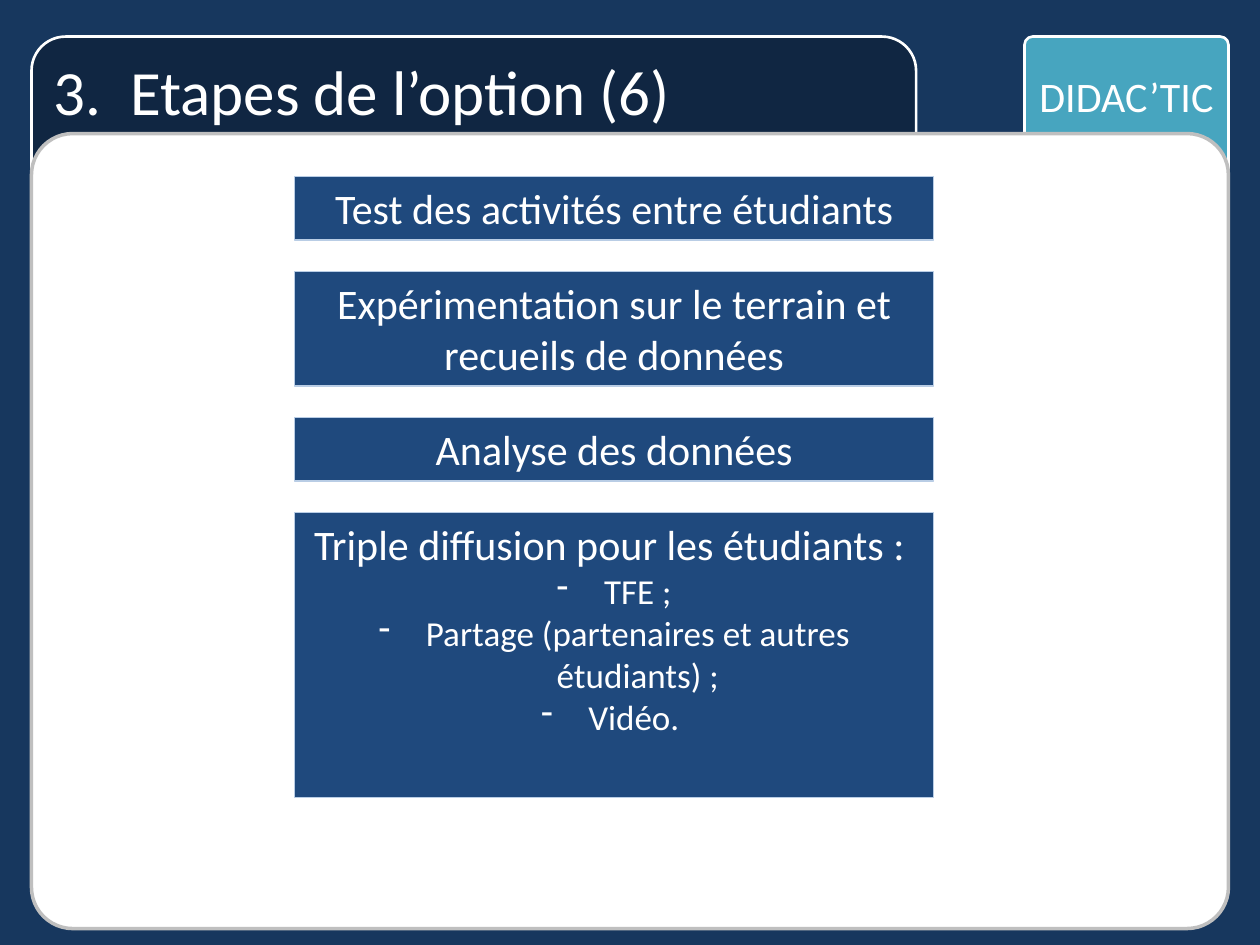
from dataclasses import dataclass

from lxml import etree
from pptx import Presentation
from pptx.dml.color import RGBColor
from pptx.enum.shapes import MSO_SHAPE
from pptx.enum.text import MSO_ANCHOR, PP_ALIGN
from pptx.oxml.ns import qn
from pptx.util import Pt

RECTANGLE, ROUNDED = MSO_SHAPE.RECTANGLE, MSO_SHAPE.ROUNDED_RECTANGLE
TOP, LEFT, CENTER = MSO_ANCHOR.TOP, PP_ALIGN.LEFT, PP_ALIGN.CENTER
BLANK_LAYOUT = 6
FONT = "Calibri"
WHITE, NAVY, BLUE = "FFFFFF", "17375E", "1F497D"

STEP_LEFT, STEP_TOP, STEP_WIDTH, STEP_GAP = 168.5, 100.8, 365, 18
BULLET_INDENT = 27


@dataclass
class Line:
    text: str
    size: float = 24
    align: PP_ALIGN = CENTER
    bullet: bool = False


@dataclass
class Panel:
    left: float
    top: float
    width: float
    height: float
    fill: str
    border: str
    border_width: float
    corner: float = 0
    opacity: int = 100
    lines: tuple[Line, ...] = ()
    side_margin: float = 7.2
    top_margin: float = 3.6


@dataclass
class Step:
    height: float
    lines: tuple[Line, ...]


def color(value: str) -> RGBColor:
    return RGBColor.from_string(value)


def set_values(target, values: dict) -> None:
    for name, value in values.items():
        setattr(target, name, value)


def add_dash(para) -> None:
    """Give the paragraph a dash bullet with a hanging indent."""
    properties = para._p.get_or_add_pPr()
    properties.set("marL", str(Pt(BULLET_INDENT)))
    properties.set("indent", str(-Pt(BULLET_INDENT)))
    etree.SubElement(properties, qn("a:buChar")).set("char", "-")


def write_line(para, line: Line) -> None:
    para.alignment = line.align
    if line.bullet:
        add_dash(para)
    span = para.add_run()
    span.text = line.text
    set_values(span.font, {"name": FONT, "size": Pt(line.size)})
    span.font.color.rgb = color(WHITE)


def draw_panel(page, panel: Panel) -> None:
    kind = ROUNDED if panel.corner else RECTANGLE
    box = page.shapes.add_shape(
        kind, Pt(panel.left), Pt(panel.top), Pt(panel.width), Pt(panel.height))
    if panel.corner:
        box.adjustments[0] = panel.corner
    box.shadow.inherit = False
    box.fill.solid()
    box.fill.fore_color.rgb = color(panel.fill)
    if panel.opacity < 100:
        tint = box._element.spPr.find(qn("a:solidFill"))[0]
        etree.SubElement(tint, qn("a:alpha")).set("val", str(panel.opacity * 1000))
    box.line.color.rgb = color(panel.border)
    box.line.width = Pt(panel.border_width)

    frame = box.text_frame
    set_values(frame, {
        "word_wrap": True,
        "vertical_anchor": TOP,
        "margin_left": Pt(panel.side_margin),
        "margin_right": Pt(panel.side_margin),
        "margin_top": Pt(panel.top_margin),
        "margin_bottom": Pt(3.6),
    })
    for index, line in enumerate(panel.lines):
        write_line(frame.add_paragraph() if index else frame.paragraphs[0], line)


def draw_steps(page, steps: list[Step]) -> None:
    """Stack the steps downwards with equal gaps."""
    top = STEP_TOP
    for step in steps:
        draw_panel(page, Panel(STEP_LEFT, top, STEP_WIDTH, step.height,
                               BLUE, "B9CDE5", 0.75, lines=step.lines))
        top += step.height + STEP_GAP


# Title tab, label tab and the white sheet in front of them
FRAME = [
    Panel(18, 20.9, 505.5, 474.5, "0F243E", WHITE, 1.5, 0.041, 85,
          (Line("3.  Etapes de l’option (6)", 36, LEFT),)),
    Panel(585.4, 20.9, 116.6, 471, "4BACC6", WHITE, 1.5, 0.041, 94,
          (Line("DIDAC’TIC"),), side_margin=3.6, top_margin=18.2),
    Panel(18, 76.3, 684, 454.3, WHITE, "BFBFBF", 2, 0.052),
]

# Stages of the option, from top to bottom
STEPS = [
    Step(36.4, (Line("Test des activités entre étudiants"),)),
    Step(65.4, (Line("Expérimentation sur le terrain et recueils de données"),)),
    Step(36.4, (Line("Analyse des données"),)),
    Step(162.7, (
        Line("Triple diffusion pour les étudiants : "),
        Line("TFE ;", 20, bullet=True),
        Line("Partage (partenaires et autres étudiants) ;", 20, bullet=True),
        Line("Vidéo. ", 20, bullet=True),
    )),
]


def main() -> None:
    deck = Presentation()
    set_values(deck, {"slide_width": Pt(720), "slide_height": Pt(540)})
    page = deck.slides.add_slide(deck.slide_layouts[BLANK_LAYOUT])
    page.background.fill.solid()
    page.background.fill.fore_color.rgb = color(NAVY)
    for panel in FRAME:
        draw_panel(page, panel)
    draw_steps(page, STEPS)
    deck.save("out.pptx")


if __name__ == "__main__":
    main()
